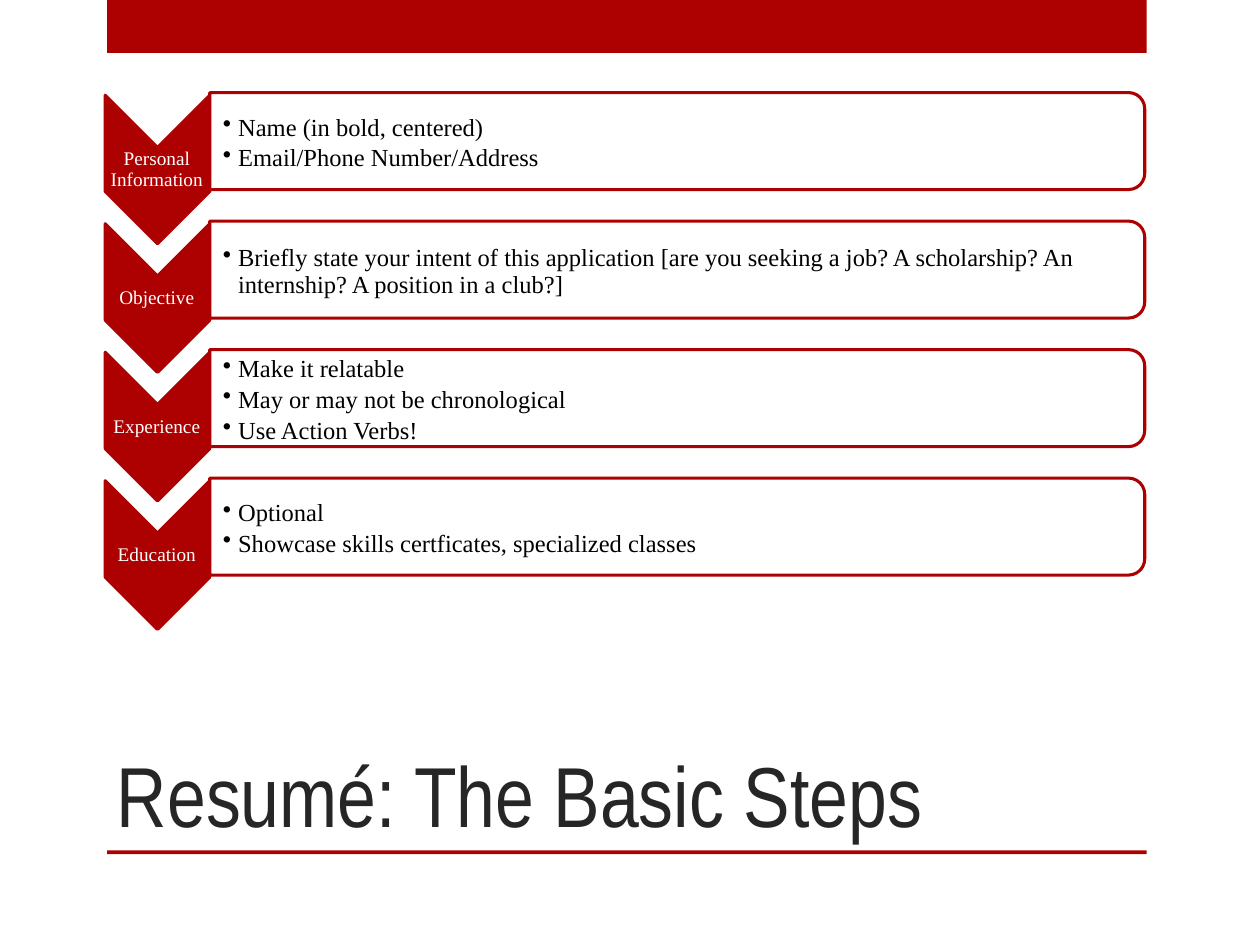
from lxml import etree
from pptx import Presentation
from pptx.dml.color import RGBColor
from pptx.enum import shapes, text
from pptx.oxml import ns
from pptx.util import Inches, Pt

COLORS = {"red": "AD0101", "white": "FFFFFF", "black": "000000", "title": "262626"}
STEPS = [
    ("Personal Information", ["Name (in bold, centered)", "Email/Phone Number/Address"]),
    ("Objective", ["Briefly state your intent of this application [are you seeking a job? "
                   "A scholarship? An internship? A position in a club?]"]),
    ("Experience", ["Make it relatable", "May or may not be chronological", "Use Action Verbs!"]),
    ("Education", ["Optional", "Showcase skills certficates, specialized classes"]),
]
LABEL = {"alignment": text.PP_ALIGN.CENTER, "line_spacing": 0.9, "space_after": Pt(4)}
BULLET = {"alignment": text.PP_ALIGN.LEFT, "line_spacing": 0.9, "space_after": Pt(2.5)}
TITLE = {"alignment": text.PP_ALIGN.LEFT}
MIDDLE = text.MSO_ANCHOR.MIDDLE

prs = Presentation()
prs.slide_width, prs.slide_height = Inches(10), Inches(7.5)
s = prs.slides.add_slide(prs.slide_layouts[6])


def add_shape(kind, box, fill, line=None, rotation=0):
    sp = s.shapes.add_shape(kind, *map(Inches, box))
    sp.shadow.inherit = False
    sp.rotation = rotation
    sp.fill.solid()
    sp.fill.fore_color.rgb = RGBColor.from_string(COLORS[fill])
    if line:
        sp.line.color.rgb = RGBColor.from_string(COLORS[line])
        sp.line.width = Pt(1.75)
        etree.SubElement(sp.line._get_or_add_ln(), ns.qn("a:round"))
    else:
        sp.line.fill.background()
    return sp


def add_text(box, lines, size, font, color, insets, anchor, paragraph, bullet=False):
    tf = s.shapes.add_textbox(*map(Inches, box)).text_frame
    tf.word_wrap = True
    tf.vertical_anchor = anchor
    for side, inset in zip(("left", "top", "right", "bottom"), insets):
        setattr(tf, f"margin_{side}", Inches(inset))
    for i, line in enumerate(lines):
        p = tf.add_paragraph() if i else tf.paragraphs[0]
        for name, value in paragraph.items():
            setattr(p, name, value)
        if bullet:
            pPr = p._p.get_or_add_pPr()
            pPr.set("marL", str(Inches(0.12)))
            pPr.set("indent", str(Inches(-0.12)))
            etree.SubElement(pPr, ns.qn("a:buChar"), char="•")
        r = p.add_run()
        r.text = line
        for name, value in {"size": Pt(size), "name": font}.items():
            setattr(r.font, name, value)
        r.font.color.rgb = RGBColor.from_string(COLORS[color])


for top, height in ((0, 0.42), (6.75, 0.03)):
    add_shape(shapes.MSO_SHAPE.RECTANGLE, (0.85, top, 8.25, height), "red")

add_text((0.83, 5, 7.42, 1.75), ["Resumé: The Basic Steps"], 48.6, "Arial Narrow",
         "title", (0.1, 0.05, 0.1, 0.05), text.MSO_ANCHOR.BOTTOM, TITLE)

for i, (label, points) in enumerate(STEPS):
    y = 1.02 * i
    add_shape(shapes.MSO_SHAPE.CHEVRON, (0.66, 0.93 + y, 1.18, 0.83), "red", "red", 90)
    add_text((0.83, 1.17 + y, 0.83, 0.36), [label], 11, "Times New Roman", "white",
             (0.01,) * 4, MIDDLE, LABEL)
    panel = add_shape(shapes.MSO_SHAPE.ROUND_2_SAME_RECTANGLE,
                      (4.99, -2.59 + y, 0.77, 7.42), "white", "red", 90)
    fill = panel._element.spPr.find(ns.qn("a:solidFill"))
    etree.SubElement(fill[0], ns.qn("a:alpha"), val="90000")
    add_text((1.66, 0.79 + y, 7.38, 0.7), points, 14, "Times New Roman", "black",
             (0.11, 0.01, 0.01, 0.01), MIDDLE, BULLET, bullet=True)

prs.save("out.pptx")
